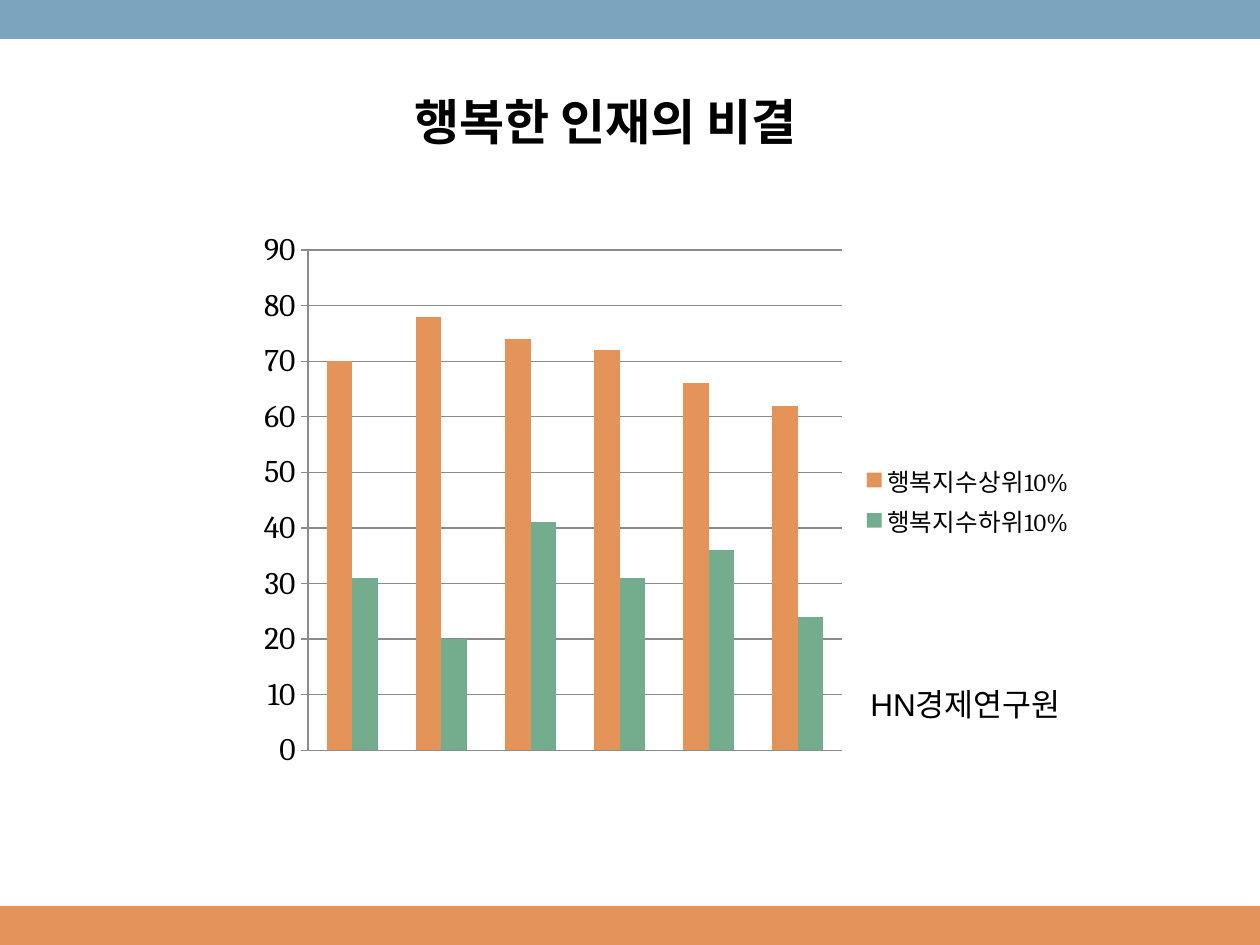
from pptx import Presentation, util as u
from pptx.chart.data import CategoryChartData
from pptx.dml.color import RGBColor
from pptx.enum import chart as ch, shapes, text

HEX = {"blue": "7BA5BE", "orange": "E49458", "green": "74AD8D",
       "black": "000000", "grey": "8B8B8B"}
WIDE, HIGH, BAND = 10, 7.5, 0.31
HEAD = {"name": "Cambria", "size": u.Pt(28), "bold": True}
NOTE = {"name": "Arial", "size": u.Pt(18), "bold": False}
AXIS = {"name": "Cambria", "size": u.Pt(18)}
KEY = {"name": "Cambria", "size": u.Pt(14)}
SCORES = [("행복지수상위10%", (70, 78, 74, 72, 66, 62), "orange"),
          ("행복지수하위10%", (31, 20, 41, 31, 36, 24), "green")]


def rgb(key):
    return RGBColor.from_string(HEX[key])


def style(font, form):
    for name, value in form.items():
        setattr(font, name, value)
    font.color.rgb = rgb("black")


def add_band(slide, box, color):
    band = slide.shapes.add_shape(shapes.MSO_SHAPE.RECTANGLE, *map(u.Inches, box))
    band.shadow.inherit = False
    band.fill.solid()
    band.fill.fore_color.rgb = rgb(color)
    band.line.fill.background()


def add_label(slide, box, words, form):
    frame = slide.shapes.add_textbox(*map(u.Inches, box)).text_frame
    frame.word_wrap = False
    frame.auto_size = text.MSO_AUTO_SIZE.SHAPE_TO_FIT_TEXT
    run = frame.paragraphs[0].add_run()
    run.text = words
    style(run.font, form)


def add_bars(slide, box):
    data = CategoryChartData()
    data.categories = [str(n) for n in range(1, 7)]
    for name, scores, _ in SCORES:
        data.add_series(name, scores)
    chart = slide.shapes.add_chart(ch.XL_CHART_TYPE.COLUMN_CLUSTERED,
                                   *map(u.Inches, box), data).chart
    style(chart.font, AXIS)
    chart.has_title = False

    # Columns
    plot = chart.plots[0]
    plot.gap_width, plot.overlap, plot.vary_by_categories = 150, 0, False
    for series, (_, _, color) in zip(plot.series, SCORES):
        series.format.fill.solid()
        series.format.fill.fore_color.rgb = rgb(color)

    # Axes
    chart.category_axis.visible = False
    axis = chart.value_axis
    limits = {"minimum_scale": 0, "maximum_scale": 90, "major_unit": 10,
              "has_major_gridlines": True,
              "major_tick_mark": ch.XL_TICK_MARK.OUTSIDE}
    for name, value in limits.items():
        setattr(axis, name, value)
    for part in (axis, axis.major_gridlines):
        part.format.line.color.rgb = rgb("grey")
        part.format.line.width = u.Pt(0.75)

    # Legend
    chart.has_legend = True
    chart.legend.position = ch.XL_LEGEND_POSITION.RIGHT
    chart.legend.include_in_layout = False
    style(chart.legend.font, KEY)


def main():
    deck = Presentation()
    deck.slide_width, deck.slide_height = u.Inches(WIDE), u.Inches(HIGH)
    slide = deck.slides.add_slide(deck.slide_layouts[6])
    add_band(slide, (0, HIGH - BAND, WIDE, BAND), "orange")
    add_band(slide, (0, 0, WIDE, BAND), "blue")
    add_label(slide, (3.19, 0.68, 3.52, 0.57), "행복한 인재의 비결", HEAD)
    add_bars(slide, (1.96, 1.75, 6.67, 4.44))
    add_label(slide, (6.81, 5.39, 1.75, 0.4), "HN경제연구원", NOTE)
    deck.save("out.pptx")


if __name__ == "__main__":
    main()
